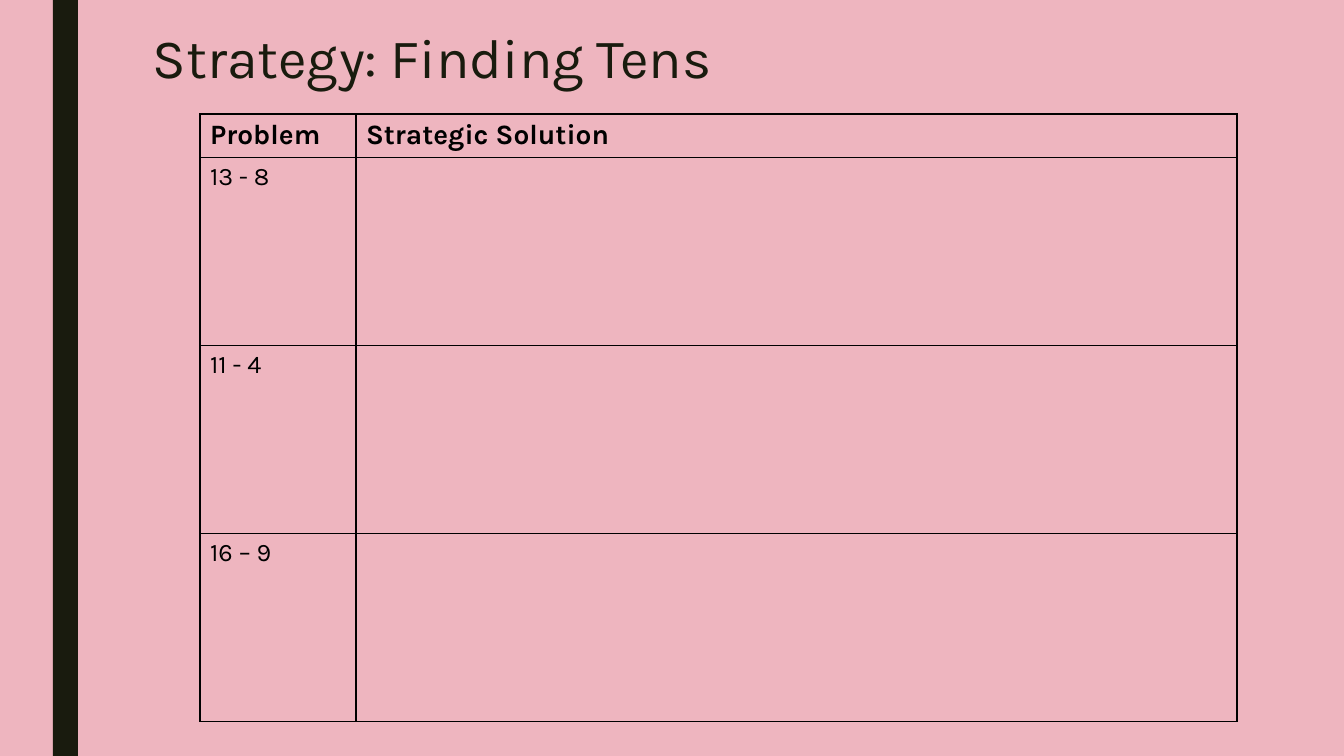
from lxml.etree import SubElement
from pptx import Presentation
from pptx.dml.color import RGBColor
from pptx.enum.shapes import MSO_SHAPE as SHAPE
from pptx.enum.text import MSO_ANCHOR as ANCHOR
from pptx.oxml.ns import qn
from pptx.util import Pt

PX = 914400 / 100.8
FONT = "Karla"
PINK, DARK, BLACK = "EEB5BF", "191B0E", "000000"
PROBLEMS = ["13 - 8", "11 - 4", "16 – 9"]


def px(*lengths):
    """Turn pixel lengths into EMU."""
    return [round(n * PX) for n in lengths]


def paint(fill, color):
    """Give a fill one solid colour."""
    fill.solid()
    fill.fore_color.rgb = RGBColor.from_string(color)


def write(tf, text, size, color, bold=False):
    """Set the text of a frame and format its run."""
    tf.text = text
    for r in tf.paragraphs[0].runs:
        r.font.name = FONT
        r.font.size = Pt(size)
        r.font.bold = bold
        r.font.color.rgb = RGBColor.from_string(color)


def add_bar(slide, box, color):
    """Add a plain filled rectangle."""
    sp = slide.shapes.add_shape(SHAPE.RECTANGLE, *px(*box))
    sp.shadow.inherit = False
    sp.line.fill.background()
    paint(sp.fill, color)


def add_title(slide, box, text):
    """Add the slide heading."""
    tf = slide.shapes.add_textbox(*px(*box)).text_frame
    tf.word_wrap = True
    tf.vertical_anchor = ANCHOR.MIDDLE
    write(tf, text, 39.6, DARK)
    tf.paragraphs[0].line_spacing = 0.89


def add_borders(cell, color):
    """Draw a thin line on all four sides of a cell."""
    tcPr = cell._tc.get_or_add_tcPr()
    for side in ("a:lnL", "a:lnR", "a:lnT", "a:lnB"):
        ln = SubElement(tcPr, qn(side), w=str(Pt(1)))
        SubElement(SubElement(ln, qn("a:solidFill")), qn("a:srgbClr"), val=color)


def add_grid(slide, left, top, widths, heights, rows):
    """Add an unfilled bordered table with a bold header row."""
    box = px(left, top, sum(widths), sum(heights))
    table = slide.shapes.add_table(len(rows), len(widths), *box).table
    table.first_row = table.horz_banding = False
    for column, width in zip(table.columns, px(*widths)):
        column.width = width
    for i, (row, height) in enumerate(zip(table.rows, px(*heights))):
        row.height = height
        header = i == 0
        for cell, text in zip(row.cells, rows[i]):
            add_borders(cell, BLACK)
            cell.fill.background()
            write(cell.text_frame, text, 20 if header else 18, BLACK, header)


def main():
    """Build the slide and save it."""
    prs = Presentation()
    prs.slide_width, prs.slide_height = px(1344, 756)
    slide = prs.slides.add_slide(prs.slide_layouts[6])
    paint(slide.background.fill, PINK)
    add_bar(slide, (53, 0, 25, 756), DARK)
    add_title(slide, (143, 23, 1058, 76), "Strategy: Finding Tens")
    rows = [("Problem", "Strategic Solution")] + [(p, "") for p in PROBLEMS]
    heights = [43] + [188] * len(PROBLEMS)
    add_grid(slide, 200, 114, [156, 881], heights, rows)
    prs.save("out.pptx")


if __name__ == "__main__":
    main()
